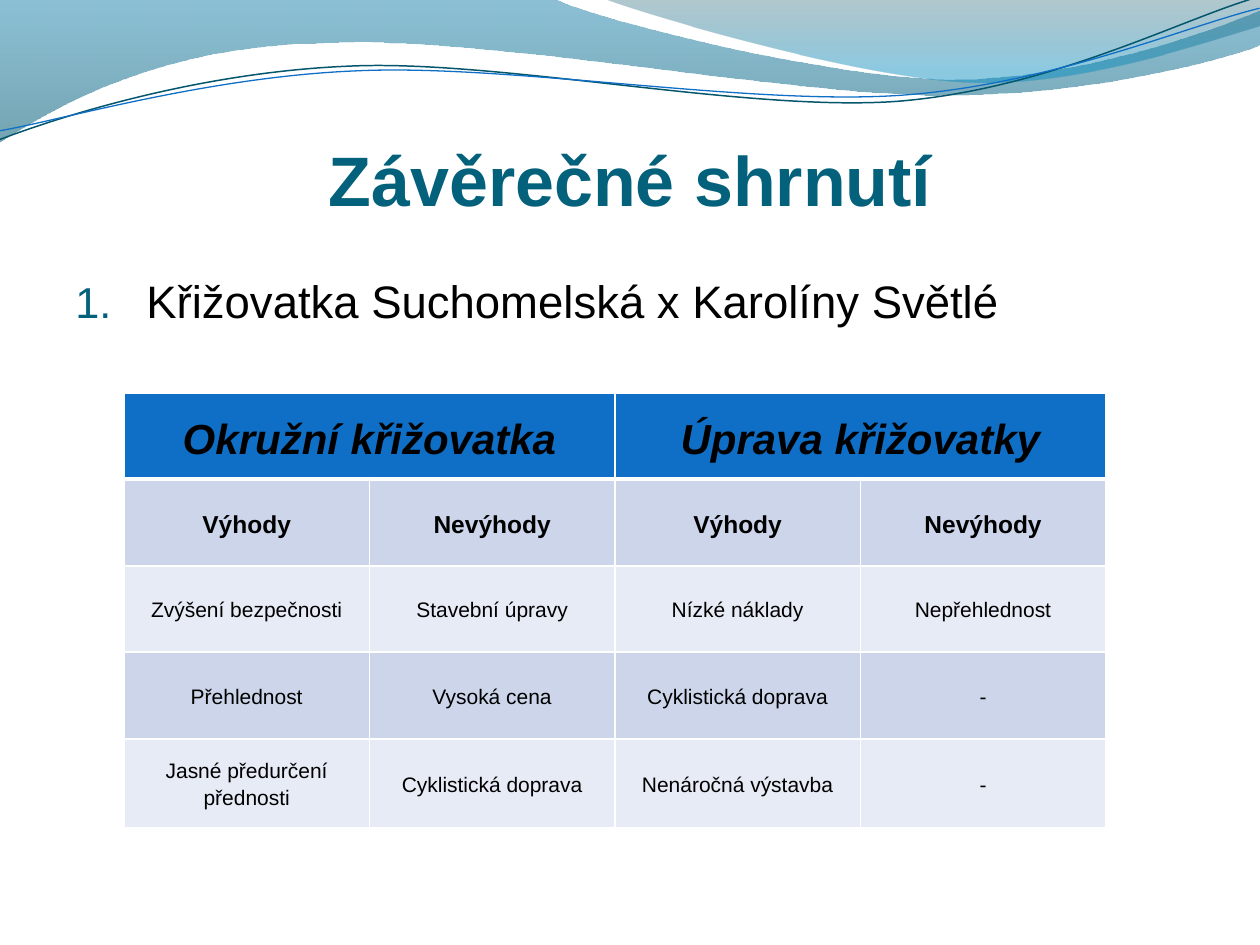
from pptx import Presentation
from pptx.dml.color import RGBColor as Rgb
from pptx.enum.text import MSO_ANCHOR as Anchor, PP_ALIGN as Align
from pptx.oxml import parse_xml
from pptx.oxml.ns import nsdecls
from pptx.util import Pt

TEAL = Rgb(0x04, 0x61, 0x7B)
DEEP = Rgb(0x04, 0x56, 0x6D)
BLUE = Rgb(0x0F, 0x6F, 0xC6)
BLACK = Rgb(0, 0, 0)
WHITE = Rgb(255, 255, 255)
BAND = Rgb(0xCC, 0xD5, 0xEA)
PALE = Rgb(0xE7, 0xEB, 0xF5)
SKY = Rgb(0x00, 0x74, 0xA1)
DUSK = Rgb(0x00, 0x5A, 0x73)
NIGHT = Rgb(0x00, 0x49, 0x5E)
AQUA = Rgb(0x00, 0x8B, 0xBF)


def px(n):
    return round(n * 914400 / 126)


class Deck:
    """Holds the style and the current slide."""

    def __init__(self, wide, high, font):
        self.prs = Presentation()
        self.prs.slide_width, self.prs.slide_height = px(wide), px(high)
        self.slide = self.prs.slides.add_slide(self.prs.slide_layouts[5])
        self.shapes = self.slide.shapes
        self.font = font

    def run(self, para, text, size, color, bold=False, slant=False):
        run = para.add_run()
        run.text = text
        font = run.font
        font.name, font.size = self.font, Pt(size)
        font.bold, font.italic = bold, slant
        font.color.rgb = color

    def free(self, path, closed):
        spots = [(px(x), px(y)) for step in path
                 for x, y in zip(step[::2], step[1::2])]
        form = self.shapes.build_freeform(*spots[0], scale=1.0)
        form.add_line_segments(spots[1:], close=closed)
        shape = form.convert_to_shape()
        shape.shadow.inherit = False
        legs = iter(shape.element.findall(".//{*}lnTo"))
        for step in path[1:]:
            leg = next(legs)
            if len(step) == 6:
                bend = parse_xml(f'<a:cubicBezTo {nsdecls("a")}/>')
                leg.addprevious(bend)
                for part in (leg, next(legs), next(legs)):
                    bend.append(part[0])
                    part.getparent().remove(part)
        return shape

    def wave(self, path, stops):
        shape = self.free(path, True)
        shape.line.fill.background()
        shape.fill.background()
        marks = "".join(
            f'<a:gs pos="{pos * 1000}"><a:srgbClr val="{color}">'
            f'<a:alpha val="{alpha * 1000}"/></a:srgbClr></a:gs>'
            for pos, color, alpha in stops)
        props = shape.element.spPr
        old = props.find("{*}noFill")
        props.replace(old, parse_xml(
            f'<a:gradFill {nsdecls("a")}><a:gsLst>{marks}</a:gsLst>'
            '<a:lin ang="5400000" scaled="0"/></a:gradFill>'))

    def curve(self, path, color, width, turn):
        shape = self.free(path, False)
        shape.rotation = turn
        shape.fill.background()
        shape.line.color.rgb = color
        shape.line.width = Pt(width)

    def title(self, text, box, size, color):
        shape = self.shapes.title
        self.shapes.element.append(shape.element)
        shape.left, shape.top, shape.width, shape.height = map(px, box)
        frame = shape.text_frame
        frame.margin_left = frame.margin_right = frame.margin_bottom = 0
        frame.margin_top = px(6)
        frame.vertical_anchor = Anchor.MIDDLE
        para = frame.paragraphs[0]
        para.alignment = Align.CENTER
        self.run(para, text, size, color, bold=True)

    def item(self, text, box, size, color, mark):
        frame = self.shapes.add_textbox(*map(px, box)).text_frame
        frame.word_wrap = True
        para = frame.paragraphs[0]
        para.space_before = Pt(5)
        self.run(para, text, size, color)
        props = para._p.get_or_add_pPr()
        props.set("marL", str(px(71)))
        props.set("indent", str(-px(71)))
        for part in (f'<a:buClr {nsdecls("a")}><a:srgbClr val="{mark}"/></a:buClr>',
                     f'<a:buSzPct {nsdecls("a")} val="95000"/>',
                     f'<a:buFont {nsdecls("a")} typeface="{self.font}"/>',
                     f'<a:buAutoNum {nsdecls("a")} type="arabicPeriod"/>'):
            props.append(parse_xml(part))

    def cell(self, cell, text, fill, edges, style):
        cell.margin_left = cell.margin_right = px(9)
        cell.margin_top = cell.margin_bottom = 0
        cell.vertical_anchor = Anchor.MIDDLE
        props = cell._tc.get_or_add_tcPr()
        for side, width in zip("LRTB", edges):
            props.append(parse_xml(
                f'<a:ln{side} {nsdecls("a")} w="{Pt(width)}"><a:solidFill>'
                f'<a:srgbClr val="{WHITE}"/></a:solidFill></a:ln{side}>'))
        cell.fill.solid()
        cell.fill.fore_color.rgb = fill
        if text:
            para = cell.text_frame.paragraphs[0]
            para.alignment = Align.CENTER
            para.line_spacing = 1.15
            self.run(para, text, *style)

    def table(self, rows, left, top, wide, highs):
        cols = len(rows[0])
        table = self.shapes.add_table(
            len(rows), cols, px(left), px(top),
            px(wide), px(sum(highs))).table
        table.horz_banding = False
        for col in table.columns:
            col.width = px(wide / cols)
        heads = {0: (24, BLACK, True, True), 1: (14, BLACK, True)}
        for r, texts in enumerate(rows):
            table.rows[r].height = px(highs[r])
            fill = BLUE if r == 0 else BAND if r % 2 else PALE
            edges = (1, 1, 3 if r == 1 else 1, 3 if r == 0 else 1)
            for c, text in enumerate(texts):
                self.cell(table.cell(r, c), text, fill, edges,
                          heads.get(r, (12, BLACK)))
        for c in range(0, cols, 2):
            table.cell(0, c).merge(table.cell(0, c + 1))

    def save(self):
        self.prs.save("out.pptx")


deck = Deck(1260, 945, "Arial")
deck.wave([(0, 0), (554, -1), (600, 21, 837, 79, 955, 79),
           (1075, 79, 1207, 33, 1260, 11), (1261, 45),
           (1239, 55, 1096, 96, 940, 95), (784, 95, 481, 35, 324, 43),
           (163, 45, 58, 105, -1, 142), (0, 0)],
          [(0, SKY, 45), (100, DUSK, 55)])
deck.wave([(604, -1), (641, 14, 859, 78, 969, 82),
           (1079, 87, 1211, 40, 1260, 26), (1260, 0), (604, -1)],
          [(0, NIGHT, 30), (80, AQUA, 45)])
deck.curve([(-3, 110), (58, 90, 199, 52, 350, 53),
            (499, 53, 745, 118, 896, 114),
            (1049, 109, 1184, 45, 1260, 27)], DEEP, 0.85, 357.3)
deck.curve([(-2, 101), (57, 94, 207, 57, 357, 58),
            (509, 58, 750, 112, 902, 108),
            (1052, 104, 1189, 52, 1262, 38)], BLUE, 0.75, 357.3)
deck.title("Závěrečné shrnutí", (63, 97, 1134, 158), 40, TEAL)
deck.item("Křižovatka Suchomelská x Karolíny Světlé",
          (63, 267, 1134, 605), 26, BLACK, TEAL)
deck.table([
    ("Okružní křižovatka", "", "Úprava křižovatky", ""),
    ("Výhody", "Nevýhody") * 2,
    ("Zvýšení bezpečnosti", "Stavební úpravy", "Nízké náklady", "Nepřehlednost"),
    ("Přehlednost", "Vysoká cena", "Cyklistická doprava", "-"),
    ("Jasné předurčení přednosti", "Cyklistická doprava",
     "Nenáročná výstavba", "-"),
], 124, 393, 982, (86, 87, 86, 87, 89))
deck.save()
